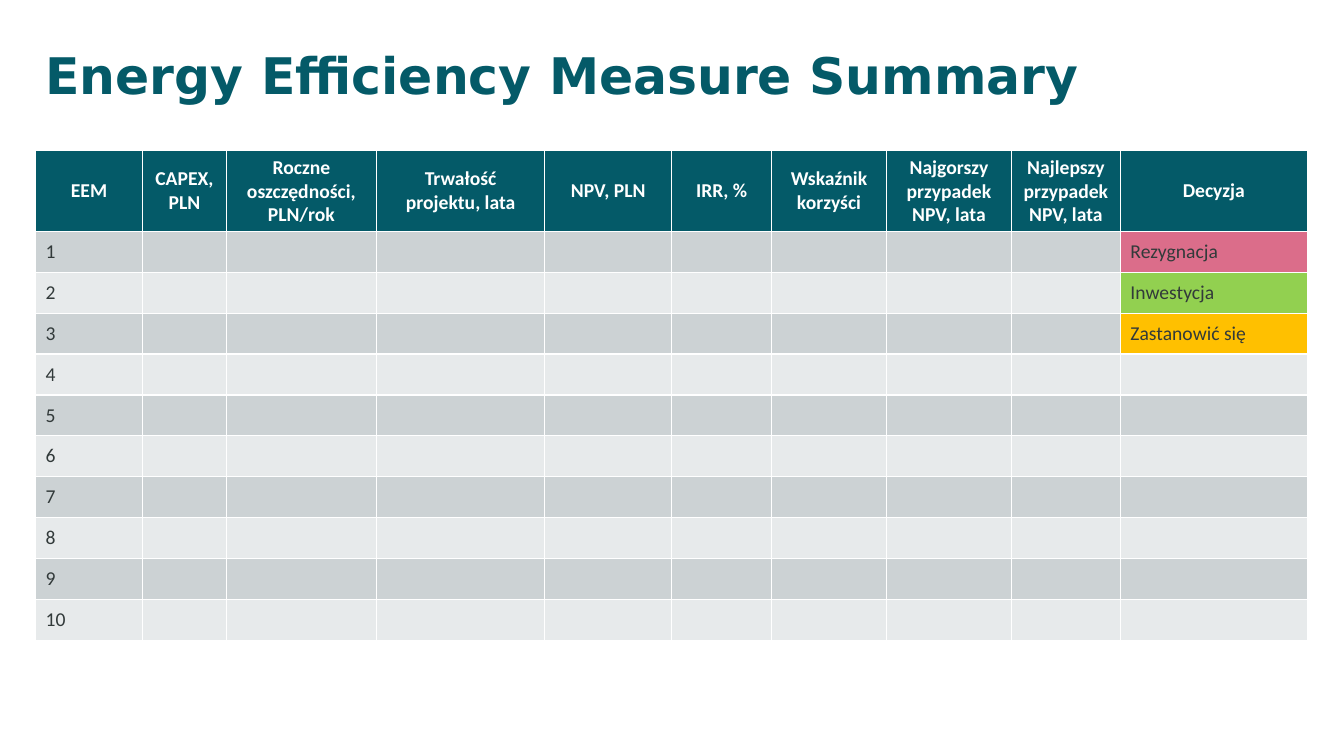
from pptx import Presentation
from pptx.dml.color import RGBColor
from pptx.enum.text import MSO_ANCHOR, PP_ALIGN
from pptx.util import Pt

TEAL, WHITE, INK = "045A68", "FFFFFF", "323A3A"
BANDS = ("CCD2D4", "E7EAEB")
MEASURE_COUNT = 10
HEADER_HEIGHT = 57.8

# Heading and width of each column
COLUMNS = [
    ("EEM", 76.5),
    ("CAPEX, PLN", 59.8),
    ("Roczne oszczędności, PLN/rok", 107.3),
    ("Trwałość projektu, lata", 120.2),
    ("NPV, PLN", 90.7),
    ("IRR, %", 71.3),
    ("Wskaźnik korzyści", 82.1),
    ("Najgorszy przypadek NPV, lata", 89.3),
    ("Najlepszy przypadek\vNPV, lata", 77.8),
    ("Decyzja", 133.6),
]

# Decision and its colour, by measure number
DECISIONS = {
    1: ("Rezygnacja", "DB6D8A"),
    2: ("Inwestycja", "92D050"),
    3: ("Zastanowić się", "FFC000"),
}


def rgb(hex_colour):
    return RGBColor.from_string(hex_colour)


def style_paragraph(paragraph, typeface, size, colour, bold):
    font = paragraph.font
    font.name, font.size, font.bold = typeface, Pt(size), bold
    font.color.rgb = rgb(colour)


def add_title(slide, left, top, width, height):
    title = slide.shapes.add_textbox(Pt(left), Pt(top), Pt(width), Pt(height))
    frame = title.text_frame
    frame.word_wrap = True
    frame.vertical_anchor = MSO_ANCHOR.BOTTOM
    heading = frame.paragraphs[0]
    heading.text = "Energy Efficiency Measure Summary"
    heading.line_spacing = 0.9
    style_paragraph(heading, "DejaVu Sans", 36, TEAL, True)


def fill_cell(cell, text, fill, colour=INK, bold=False, align=PP_ALIGN.LEFT):
    cell.fill.solid()
    cell.fill.fore_color.rgb = rgb(fill)
    cell.vertical_anchor = MSO_ANCHOR.MIDDLE
    paragraph = cell.text_frame.paragraphs[0]
    paragraph.text = text
    paragraph.alignment = align
    style_paragraph(paragraph, "Calibri", 14, colour, bold)


def add_measure_table(slide, left, top, width, height):
    table = slide.shapes.add_table(
        MEASURE_COUNT + 1, len(COLUMNS), Pt(left), Pt(top), Pt(width), Pt(height)
    ).table

    table.rows[0].height = Pt(HEADER_HEIGHT)
    for index, (heading, column_width) in enumerate(COLUMNS):
        table.columns[index].width = Pt(column_width)
        fill_cell(table.cell(0, index), heading, TEAL, WHITE, True, PP_ALIGN.CENTER)

    last = len(COLUMNS) - 1
    for measure in range(1, MEASURE_COUNT + 1):
        table.rows[measure].height = Pt((height - HEADER_HEIGHT) / MEASURE_COUNT)
        band = BANDS[(measure - 1) % 2]
        fill_cell(table.cell(measure, 0), str(measure), band)
        for index in range(1, last):
            fill_cell(table.cell(measure, index), "", band)
        decision, fill = DECISIONS.get(measure, ("", band))
        fill_cell(table.cell(measure, last), decision, fill)


def main():
    deck = Presentation()
    deck.slide_width, deck.slide_height = Pt(960), Pt(540)
    slide = deck.slides.add_slide(deck.slide_layouts[6])
    add_title(slide, 25.4, 14.4, 908.6, 64.8)
    add_measure_table(slide, 25.4, 107.5, 908.6, 349.8)
    deck.save("out.pptx")


if __name__ == "__main__":
    main()
